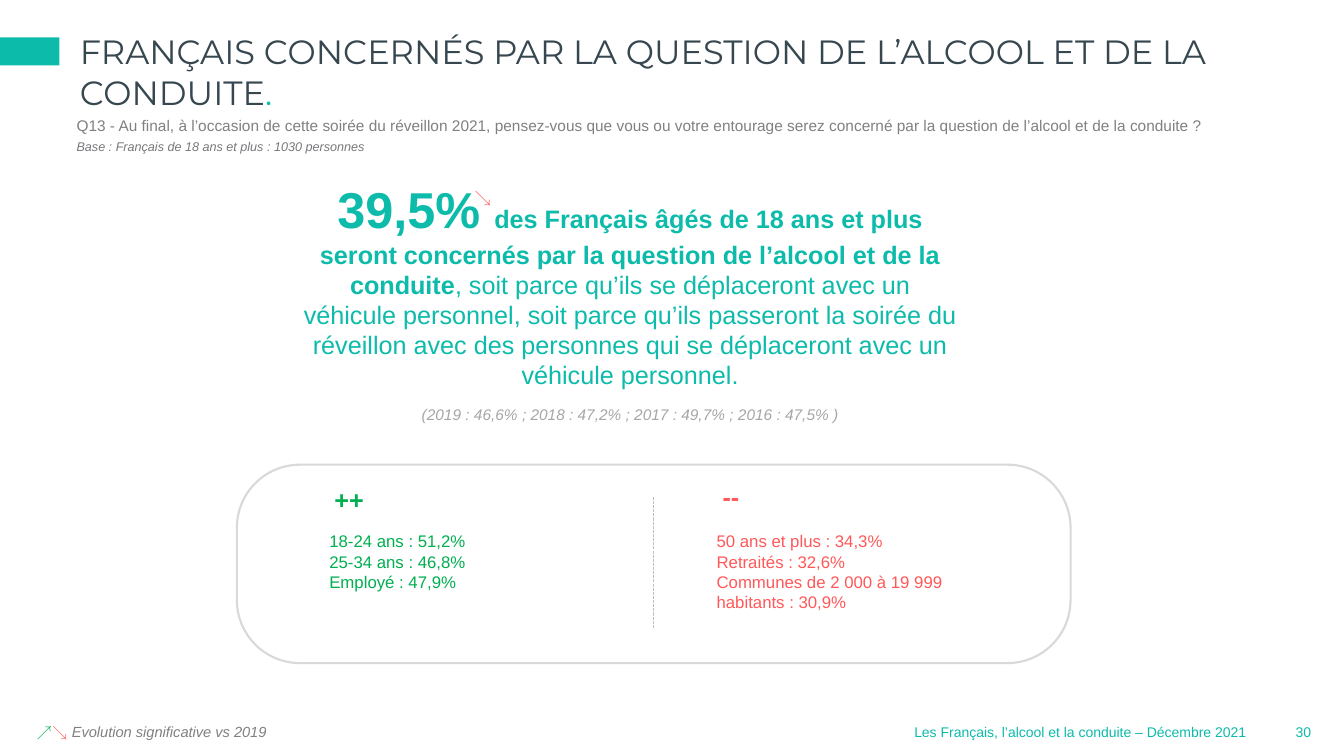
from dataclasses import dataclass

from lxml import etree
from pptx import Presentation
from pptx.dml.color import RGBColor
from pptx.enum import dml, shapes, text
from pptx.oxml import ns
from pptx.util import Cm, Pt


@dataclass(frozen=True)
class Theme:
    body_font: str = "Arial"
    title_font: str = "Montserrat"
    teal: str = "0CBBAA"
    slate: str = "37474F"
    green: str = "00B050"
    red: str = "FF5859"
    grey: str = "808080"
    base_grey: str = "77787B"
    pale_grey: str = "A6A6A6"
    divider: str = "BFBFBF"
    outline: str = "D9D9D9"
    white: str = "FFFFFF"
    figure: float = 36
    title: float = 24
    lead: float = 18
    body: float = 12
    note: float = 11
    legend: float = 10.5
    footer: float = 10
    base: float = 9


theme = Theme()
align = text.PP_ALIGN


def style(font, size=None, colour=None, bold=None, italic=None, name=None):
    """Set only the given font properties; the rest is inherited."""
    if size:
        font.size = Pt(size)
    if colour:
        font.color.rgb = RGBColor.from_string(colour)
    if bold is not None:
        font.bold = bold
    if italic is not None:
        font.italic = italic
    if name:
        font.name = name


def add_text(page, place, lines, size, colour, alignment=align.LEFT, wrap=True, margin=None, **look):
    """Add a text box with one evenly styled paragraph per line."""
    frame = page.shapes.add_textbox(*map(Cm, place)).text_frame
    frame.word_wrap = wrap
    if margin is not None:
        frame.margin_left = frame.margin_right = frame.margin_top = frame.margin_bottom = Cm(margin)
    frame.text = "\n".join(lines)
    for para in frame.paragraphs:
        para.alignment = alignment
        style(para.font, size, colour, name=theme.body_font, **look)
    return frame


deck = Presentation()
deck.slide_width, deck.slide_height = Cm(33.87), Cm(19.05)
page = deck.slides.add_slide(deck.slide_layouts[5])

# Footer and title marker
add_text(page, (32.28, 18.11, 1.14, 0.69), ["30"], theme.footer, theme.teal, align.CENTER, wrap=False)
add_text(page, (22.71, 18.11, 8.94, 0.69), ["Les Français, l’alcool et la conduite – Décembre 2021"],
         theme.footer, theme.teal, align.RIGHT, wrap=False)
marker = page.shapes.add_shape(shapes.MSO_SHAPE.RECTANGLE, Cm(0), Cm(0.94), Cm(1.5), Cm(0.71))
marker.shadow.inherit = False
marker.fill.solid()
marker.fill.fore_color.rgb = RGBColor.from_string(theme.teal)
marker.line.fill.background()

# Title
title = page.shapes.title
title.left, title.top, title.width, title.height = Cm(2.01), Cm(0.79), Cm(30), Cm(1.19)
frame = title.text_frame
frame.margin_left = frame.margin_right = frame.margin_top = frame.margin_bottom = 0
frame.vertical_anchor = text.MSO_ANCHOR.TOP
frame.auto_size = text.MSO_AUTO_SIZE.NONE
frame.word_wrap = True
para = frame.paragraphs[0]
para.alignment = align.LEFT
style(para.font, theme.title, theme.slate, name=theme.title_font)
para.add_run().text = "FRANÇAIS CONCERNÉS PAR LA QUESTION DE L’ALCOOL ET DE LA CONDUITE"
stop = para.add_run()
stop.text = "."
style(stop.font, colour=theme.teal)

# Question and base
question = add_text(page, (1.93, 2.92, 30, 0.51), [
    "Q13 - Au final, à l’occasion de cette soirée du réveillon 2021, pensez-vous que vous ou votre "
    "entourage serez concerné par la question de l’alcool et de la conduite ?",
    "Base : Français de 18 ans et plus : 1030 personnes",
], theme.note, theme.grey, margin=0)
for para in question.paragraphs:
    para.space_after = Pt(3)
style(question.paragraphs[1].font, theme.base, theme.base_grey, italic=True)

# Key figure with its earlier values
history = add_text(page, (10.62, 10.19, 10.54, 0.48),
                   ["(2019 : 46,6% ; 2018 : 47,2% ; 2017 : 49,7% ; 2016 : 47,5% )"],
                   theme.note, theme.pale_grey, align.CENTER, wrap=False, margin=0, italic=True)
history.vertical_anchor = text.MSO_ANCHOR.MIDDLE

key_message = add_text(page, (7.32, 4.37, 17.12, 5.64), [""], theme.lead, theme.teal, align.CENTER)
legend = add_text(page, (0.28, 18.06, 7.09, 0.74), [""], theme.note, theme.green, align.CENTER)
mixed_texts = [
    (key_message, [
        ("39,5% ", dict(size=theme.figure, bold=True)),
        ("des Français âgés de 18 ans et plus seront concernés par la question de l’alcool et de la conduite",
         dict(bold=True)),
        (", soit parce qu’ils se déplaceront avec un véhicule personnel, soit parce qu’ils passeront la "
         "soirée du réveillon avec des personnes qui se déplaceront avec un véhicule personnel.", {}),
    ]),
    (legend, [
        ("↗", {}),
        ("↘ ", dict(colour=theme.red)),
        ("Evolution significative vs 2019", dict(size=theme.legend, colour=theme.grey, italic=True)),
    ]),
]
for frame, spans in mixed_texts:
    for words, look in spans:
        span = frame.paragraphs[0].add_run()
        span.text = words
        style(span.font, **look)
add_text(page, (11.71, 4.57, 1.04, 0.76), ["↘"], theme.body, theme.red)

# Panel of groups above and below the average
panel = page.shapes.add_shape(shapes.MSO_SHAPE.ROUNDED_RECTANGLE, Cm(5.97), Cm(11.71), Cm(21.01), Cm(5))
panel.adjustments[0] = 0.318
panel.shadow.inherit = False
panel.fill.solid()
panel.fill.fore_color.rgb = RGBColor.from_string(theme.white)
panel.line.color.rgb = RGBColor.from_string(theme.outline)
panel.line.width = Pt(1.5)

groups = [
    ("++", (8.18, 12.07, 1.35, 1.02), theme.green, (8.05, 13.26, 6.93, 1.8),
     ["18-24 ans : 51,2%", "25-34 ans : 46,8%", "Employé : 47,9%"]),
    ("--", (17.96, 12.01, 1.52, 1.02), theme.red, (17.81, 13.26, 7.67, 2.31),
     ["50 ans et plus : 34,3%", "Retraités : 32,6%", "Communes de 2 000 à 19 999 habitants : 30,9%"]),
]
for sign, sign_place, colour, list_place, lines in groups:
    add_text(page, sign_place, [sign], theme.lead, colour, bold=True)
    add_text(page, list_place, lines, theme.body, colour)

divider = page.shapes.add_connector(shapes.MSO_CONNECTOR.STRAIGHT, Cm(16.46), Cm(12.52), Cm(16.46), Cm(15.82))
divider.line.color.rgb = RGBColor.from_string(theme.divider)
divider.line.width = Pt(0.75)
divider.line.dash_style = dml.MSO_LINE.SQUARE_DOT
etree.SubElement(divider.element.spPr, ns.qn("a:effectLst"))

deck.save("out.pptx")
